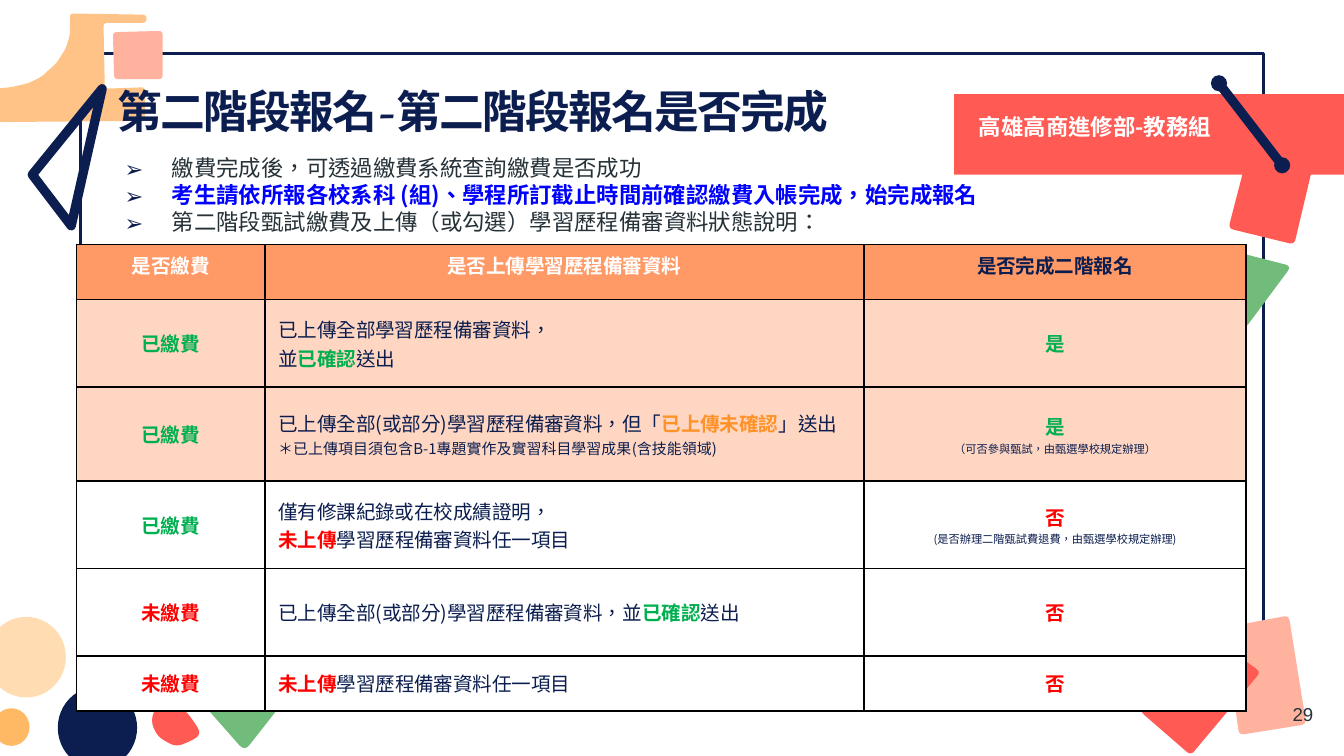
"""Build the second-stage registration slide with its status table."""
from math import hypot
from typing import NamedTuple

from lxml.etree import SubElement
from pptx import Presentation
from pptx.dml.color import RGBColor as Rgb
from pptx.enum.shapes import MSO_CONNECTOR as Link, MSO_SHAPE as Kind
from pptx.enum.text import MSO_ANCHOR as Anchor, PP_ALIGN as Align
from pptx.oxml.ns import qn
from pptx.util import Inches, Pt

UNIT = 9144
SANS = "Noto Sans CJK SC"
INK = {
    "navy": "0C1E4F", "red": "FF5A54", "orange": "FFB864", "cream": "FFDCB2",
    "peach": "FFC388", "pink": "FFB39F", "leaf": "71BC7B", "white": "FFFFFF",
    "grey": "263238", "blue": "0000FF", "black": "000000", "yes": "00B050",
    "no": "FF0000", "warn": "FF9226", "head": "FF9966", "tint": "FFD6C2",
}


class Box(NamedTuple):
    x: int
    y: int
    w: int
    h: int


class Run(NamedTuple):
    text: str
    ink: str = "navy"
    size: float = 10.5
    bold: bool = False
    font: str = SANS
    gap: int = 0


class Dot(NamedTuple):
    box: Box
    ink: str


class Patch(NamedTuple):
    ink: str
    bend: int
    spots: list[tuple[int, int]]


class Row(NamedTuple):
    high: int
    fill: str
    cells: list[list[list[Run]]]


def px(num: float) -> int:
    return round(num * UNIT)


def hue(name: str) -> Rgb:
    return Rgb.from_string(INK[name])


def bold(text: str, ink: str) -> Run:
    return Run(text, ink, bold=True)


def paint(shape, fill: str | None, line: str | None = None, width: float = 0) -> None:
    shape.shadow.inherit = False
    if fill:
        shape.fill.solid()
        shape.fill.fore_color.rgb = hue(fill)
    else:
        shape.fill.background()
    if line:
        shape.line.color.rgb = hue(line)
        shape.line.width = Pt(width)
    else:
        shape.line.fill.background()


def preset(slide, kind: Kind, box: Box):
    return slide.shapes.add_shape(kind, *map(px, box))


def oval(slide, dot: Dot) -> None:
    paint(preset(slide, Kind.OVAL, dot.box), dot.ink)


def outline(slide, spots: list[tuple[float, float]]):
    pts = [(px(x), px(y)) for x, y in spots]
    pen = slide.shapes.build_freeform(*pts[0], scale=1.0)
    pen.add_line_segments(pts[1:], close=True)
    return pen.convert_to_shape()


def soften(patch: Patch) -> list[tuple[float, float]]:
    """Round each corner with a short quadratic curve."""
    spots, pts = patch.spots, []
    for i, (x, y) in enumerate(spots):
        ends = []
        for u, v in (spots[i - 1], spots[(i + 1) % len(spots)]):
            far = hypot(u - x, v - y)
            part = min(patch.bend / far, 0.5)
            ends.append((x + (u - x) * part, y + (v - y) * part))
        (ax, ay), (bx, by) = ends
        for t in (0, 0.25, 0.5, 0.75, 1):
            p, q, r = (1 - t) ** 2, 2 * t * (1 - t), t * t
            pts.append((p * ax + q * x + r * bx, p * ay + q * y + r * by))
    return pts


def write(frame, paras: list[list[Run]], align: Align = Align.LEFT) -> None:
    for i, runs in enumerate(paras):
        para = frame.paragraphs[0] if i == 0 else frame.add_paragraph()
        para.alignment = align
        for item in runs:
            run = para.add_run()
            run.text = item.text
            font = run.font
            font.size, font.bold, font.name = Pt(item.size), item.bold, item.font
            font.color.rgb = hue(item.ink)
            props = font._element
            props.set("lang", "zh-TW")
            SubElement(props, qn("a:ea")).set("typeface", SANS)
            if item.gap:
                props.set("spc", str(item.gap))


def label(slide, box: Box, paras: list[list[Run]], align: Align = Align.LEFT,
          anchor: Anchor = Anchor.TOP):
    frame = slide.shapes.add_textbox(*map(px, box)).text_frame
    frame.word_wrap = True
    frame.vertical_anchor = anchor
    frame.margin_left = frame.margin_right = px(10)
    frame.margin_top = frame.margin_bottom = px(10)
    write(frame, paras, align)
    return frame


def bullet(para) -> None:
    props = para._p.get_or_add_pPr()
    props.set("marL", str(px(50)))
    props.set("indent", str(px(-35)))
    tone = SubElement(props, qn("a:buClr"))
    SubElement(tone, qn("a:srgbClr")).set("val", INK["navy"])
    SubElement(props, qn("a:buFont")).set("typeface", SANS)
    SubElement(props, qn("a:buChar")).set("char", "➢")


def border(cell) -> None:
    props = cell._tc.get_or_add_tcPr()
    for i, side in enumerate(("lnL", "lnR", "lnT", "lnB")):
        line = props.makeelement(qn(f"a:{side}"), {"w": str(Pt(1))})
        props.insert(i, line)
        tone = SubElement(SubElement(line, qn("a:solidFill")), qn("a:srgbClr"))
        tone.set("val", INK["black"])


def grid(slide, box: Box, cols: list[int], rows: list[Row]) -> None:
    table = slide.shapes.add_table(len(rows), len(cols), *map(px, box)).table
    table.first_row = table.horz_banding = False
    for col, wide in zip(table.columns, cols):
        col.width = px(wide)
    for i, row in enumerate(rows):
        table.rows[i].height = px(row.high)
        for j, paras in enumerate(row.cells):
            cell = table.cell(i, j)
            cell.fill.solid()
            cell.fill.fore_color.rgb = hue(row.fill)
            cell.vertical_anchor = Anchor.MIDDLE if i else Anchor.TOP
            write(cell.text_frame, paras, Align.LEFT if i and j == 1 else Align.CENTER)
            border(cell)


DOTS = [Dot(Box(43, 511, 59, 61), "navy"), Dot(Box(-5, 527, 27, 28), "orange"),
        Dot(Box(-10, 459, 59, 60), "cream")]
BACK = [
    Patch("leaf", 6, [(111, 481), (210, 476), (222, 508), (182, 559), (145, 517)]),
    Patch("red", 6, [(149, 544), (140, 531), (126, 517), (117, 524), (112, 536),
                     (117, 548), (131, 556), (147, 549)]),
    Patch("pink", 3, [(84, 24), (121, 23), (121, 59), (85, 59)]),
    Patch("peach", 3, [(52, 10), (109, 11), (109, 17), (77, 17), (78, 66), (108, 65),
                       (108, 90), (-20, 91), (-20, 65), (-5, 66), (8, 65), (21, 62),
                       (31, 57), (42, 47), (49, 36), (52, 26)]),
    Patch("pink", 4, [(959, 458), (972, 539), (922, 547), (911, 467)]),
    Patch("red", 4, [(938, 500), (886, 562), (848, 529), (898, 471)]),
]
SIDE = [Patch("red", 4, [(982, 102), (963, 182), (914, 170), (934, 93)]),
        Patch("leaf", 5, [(961, 198), (926, 245), (910, 185)])]
PAID, DUE = [[bold("已繳費", "yes")]], [[bold("未繳費", "no")]]
YES, NO = [bold("是", "yes")], [bold("否", "no")]
SENT = [bold("已確認", "yes"), Run("送出")]
NONE = [bold("未上傳", "no"), Run("學習歷程備審資料任一項目")]
ROWS = [
    Row(41, "head", [[[bold("是否繳費", "white")]], [[bold("是否上傳學習歷程備審資料", "white")]],
                     [[bold("是否完成二階報名", "navy")]]]),
    Row(65, "tint", [PAID, [[Run("已上傳全部學習歷程備審資料，")], [Run("並"), *SENT]], [YES]]),
    Row(70, "tint", [PAID, [
        [Run("已上傳全部(或部分)學習歷程備審資料，但「"), bold("已上傳未確認", "warn"), Run("」送出")],
        [Run("＊已上傳項目須包含B-1專題實作及實習科目學習成果(含技能領域)", size=8)]],
        [YES, [Run("（可否參與甄試，由甄選學校規定辦理）", size=6)]]]),
    Row(65, "white", [PAID, [[Run("僅有修課紀錄或在校成績證明，")], NONE],
                      [NO, [Run("(是否辦理二階甄試費退費，由甄選學校規定辦理)", size=6)]]]),
    Row(65, "white", [DUE, [[Run("已上傳全部(或部分)學習歷程備審資料，並"), *SENT]], [NO]]),
    Row(41, "white", [DUE, [NONE], [NO]]),
]
NOTES = [
    [Run("繳費完成後，可透過繳費系統查詢繳費是否成功", "grey", 12)],
    [Run("考生請依所報各校系科 (組)、學程所訂截止時間前確認繳費入帳完成，始完成報名", "blue", 12, True)],
    [Run("第二階段甄試繳費及上傳（或勾選）學習歷程備審資料狀態說明：", "grey", 12)],
]


def main() -> None:
    deck = Presentation()
    deck.slide_width, deck.slide_height = px(1000), Inches(45 / 8)
    slide = deck.slides.add_slide(deck.slide_layouts[6])
    frame = preset(slide, Kind.SNIP_2_DIAG_RECTANGLE, Box(60, 40, 880, 483))
    frame.adjustments[0] = frame.adjustments[1] = 0
    paint(frame, None, "navy", 1.5)
    for dot in DOTS:
        oval(slide, dot)
    for patch in BACK:
        paint(outline(slide, soften(patch)), patch.ink)
    paint(outline(slide, [(76, 66), (24, 130), (53, 168)]), None, "navy", 5)
    paint(preset(slide, Kind.RECTANGLE, Box(710, 70, 300, 60)), "red")
    label(slide, Box(710, 74, 201, 65), [[Run("高雄高商進修部-教務組", "white", 12, True)]], Align.RIGHT)
    for patch in SIDE:
        paint(outline(slide, soften(patch)), patch.ink)
    ends = [(907, 62), (954, 123)]
    bar = slide.shapes.add_connector(Link.STRAIGHT, *(px(n) for end in ends for n in end))
    bar.line.color.rgb, bar.line.width = hue("navy"), Pt(5)
    SubElement(bar._element.spPr, qn("a:effectLst"))
    for x, y in ends:
        oval(slide, Dot(Box(x - 6, y - 6, 12, 12), "navy"))
    title = Run("第二階段報名-第二階段報名是否完成", "navy", 24, True, "Vollkorn", -100)
    label(slide, Box(78, 49, 844, 63), [[title]], anchor=Anchor.BOTTOM)
    label(slide, Box(927, 510, 60, 43), [[Run("29", "grey", 10, font="Arial")]],
          Align.RIGHT, Anchor.MIDDLE)
    for para in label(slide, Box(68, 105, 827, 120), NOTES).paragraphs:
        bullet(para)
    grid(slide, Box(57, 182, 870, 347), [140, 446, 284], ROWS)
    deck.save("out.pptx")


if __name__ == "__main__":
    main()
